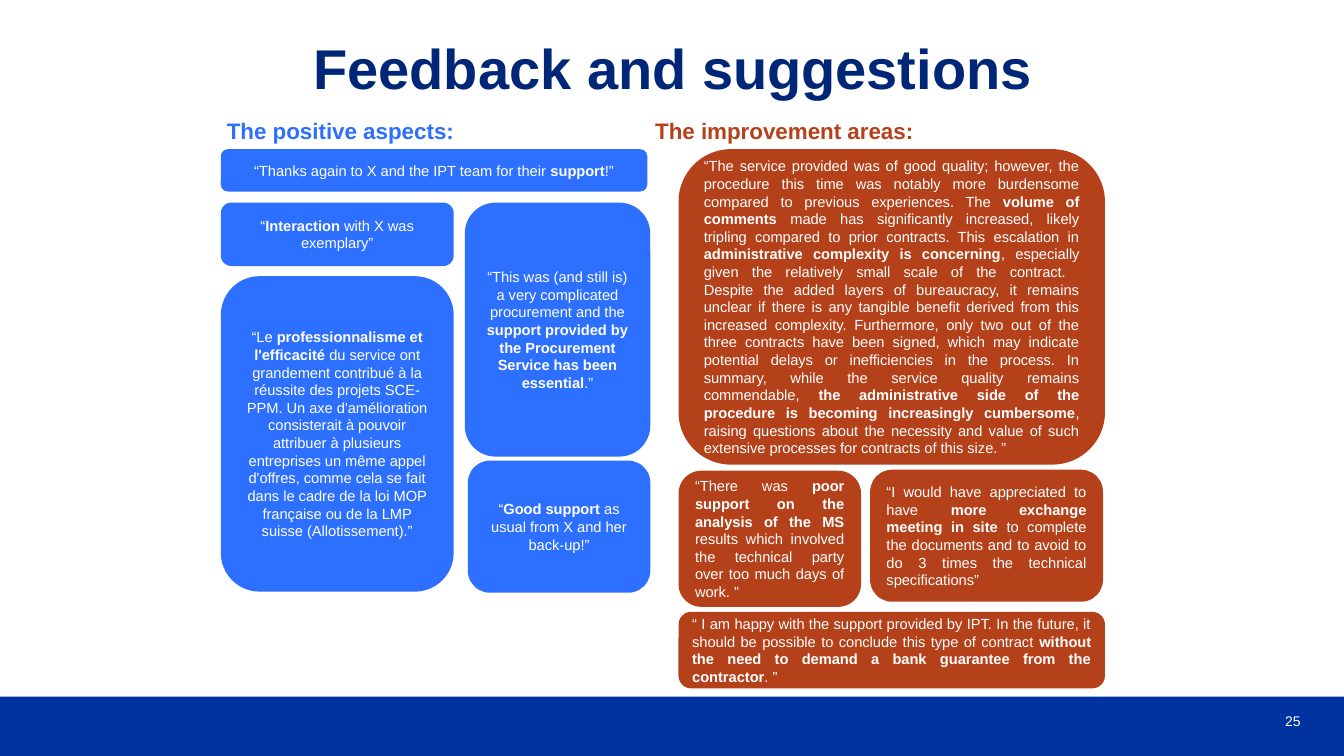
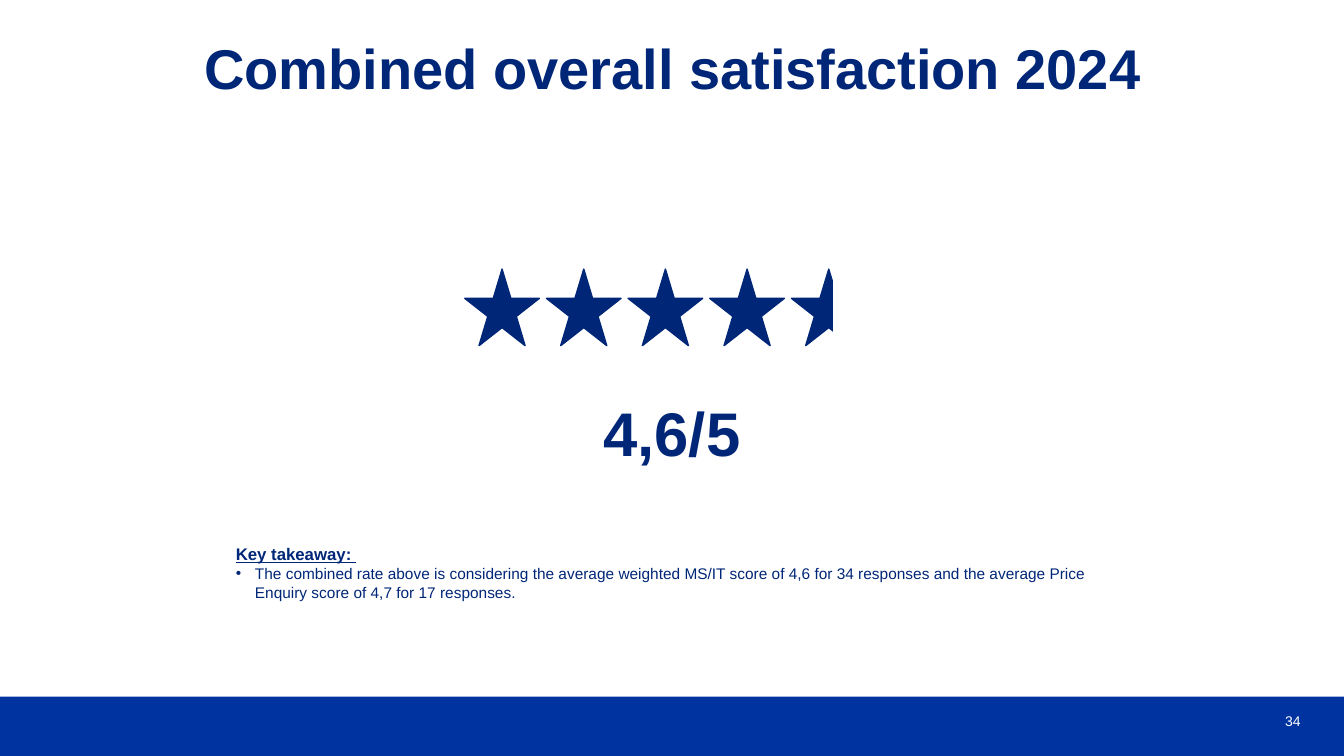
"""Build two survey slides: feedback quotes and the combined satisfaction score."""
from pptx import Presentation
from pptx.dml.color import RGBColor
from pptx.enum.shapes import MSO_SHAPE
from pptx.enum.text import MSO_ANCHOR, PP_ALIGN
from pptx.oxml.ns import qn
from pptx.util import Inches, Pt
from lxml import etree

WHITE = RGBColor(0xFF, 0xFF, 0xFF)
NAVY = RGBColor(0x00, 0x26, 0x78)
BAND_BLUE = RGBColor(0x00, 0x33, 0xA0)
BRIGHT_BLUE = RGBColor(0x2D, 0x70, 0xFF)
RUST = RGBColor(0xB4, 0x41, 0x1A)
FONT = "Arial"
RECTANGLE, ROUNDED, STAR = MSO_SHAPE.RECTANGLE, MSO_SHAPE.ROUNDED_RECTANGLE, MSO_SHAPE.STAR_5_POINT
LEFT, CENTER, RIGHT, JUSTIFY = PP_ALIGN.LEFT, PP_ALIGN.CENTER, PP_ALIGN.RIGHT, PP_ALIGN.JUSTIFY
TOP, MIDDLE = MSO_ANCHOR.TOP, MSO_ANCHOR.MIDDLE

FEEDBACK = [
    {
        "heading": "The positive aspects:", "heading_box": (2.25, 1.16, 3.2, 0.27),
        "heading_align": LEFT, "color": BRIGHT_BLUE, "quote_align": CENTER,
        "quotes": [
            ((2.19, 1.48, 4.23, 0.42), "“Thanks again to X and the IPT team for their **support**!”"),
            ((2.19, 2.01, 2.31, 0.63), "“**Interaction** with X was exemplary”"),
            ((4.61, 2.01, 1.84, 2.52),
             "“This was (and still is) a very complicated procurement and the "
             "**support provided by the Procurement Service has been essential**.”"),
            ((2.19, 2.74, 2.31, 3.13),
             "“Le **professionnalisme et l'efficacité **du service ont grandement contribué "
             "à la réussite des projets SCE-PPM. Un axe d'amélioration consisterait à pouvoir "
             "attribuer à plusieurs entreprises un même appel d'offres, comme cela se fait dans "
             "le cadre de la loi MOP française ou de la LMP suisse (Allotissement).”"),
            ((4.64, 4.57, 1.81, 1.31), "“**Good support **as usual from X and her back-up!”"),
        ],
    },
    {
        "heading": "The improvement areas:", "heading_box": (5.78, 1.16, 3.28, 0.27),
        "heading_align": RIGHT, "color": RUST, "quote_align": JUSTIFY,
        "quotes": [
            ((6.73, 1.48, 4.23, 3.13),
             "“The service provided was of good quality; however, the procedure this time was "
             "notably more burdensome compared to previous experiences. The **volume of comments "
             "**made has significantly increased, likely tripling compared to prior contracts. "
             "This escalation in **administrative complexity is concerning**, especially given "
             "the relatively small scale of the contract. ",
             "Despite the added layers of bureaucracy, it remains unclear if there is any "
             "tangible benefit derived from this increased complexity. Furthermore, only two out "
             "of the three contracts have been signed, which may indicate potential delays or "
             "inefficiencies in the process. In summary, while the service quality remains "
             "commendable, **the administrative side of the procedure is becoming increasingly "
             "cumbersome**, raising questions about the necessity and value of such extensive "
             "processes for contracts of this size. ”"),
            ((6.73, 4.67, 1.81, 1.35),
             "“There was **poor support on the analysis of the MS **results which involved the "
             "technical party over too much days of work. ”"),
            ((8.63, 4.66, 2.31, 1.31),
             "“I would have appreciated to have **more exchange meeting in site** to complete "
             "the documents and to avoid to do 3 times the technical specifications”"),
            ((6.73, 6.07, 4.23, 0.76),
             "“ I am happy with the support provided by IPT. In the future, it should be possible "
             "to conclude this type of contract **without the need to demand a bank guarantee "
             "from the contractor**. ”"),
        ],
    },
]

SCORE = "4,6/5"
STAR_COUNT = 5
STAR_LEFT, STAR_TOP, STAR_PITCH = 4.61, 2.67, 0.81
STAR_SIZE = (0.74, 0.76)
STAR_MASK = (8.27, 2.66, 0.45, 0.8)
TAKEAWAY_HEADING = "Key takeaway: "
TAKEAWAY = (
    "The combined rate above is considering the average weighted MS/IT score of 4,6 for 34 "
    "responses and the average Price Enquiry score of 4,7 for 17 responses."
)


def add_shape(slide, kind, box, fill, line=None):
    shape = slide.shapes.add_shape(kind, *map(Inches, box))
    shape.shadow.inherit = False
    shape.fill.solid()
    shape.fill.fore_color.rgb = fill
    if line is None:
        shape.line.fill.background()
    else:
        shape.line.color.rgb = line
        shape.line.width = Pt(1)
    return shape


def style(paragraph, size, color, bold=None, align=LEFT):
    paragraph.alignment = align
    font = paragraph.font
    font.name, font.size, font.bold = FONT, Pt(size), bold
    font.color.rgb = color


def add_text(slide, box, text, size, color, bold=None, align=LEFT, anchor=TOP, inset=False):
    frame = slide.shapes.add_textbox(*map(Inches, box)).text_frame
    frame.word_wrap = True
    frame.vertical_anchor = anchor
    if not inset:
        frame.margin_left = frame.margin_right = frame.margin_top = frame.margin_bottom = 0
    paragraph = frame.paragraphs[0]
    paragraph.text = text
    style(paragraph, size, color, bold, align)
    return frame


def add_quote(slide, box, lines, fill, align):
    """Add a rounded quote in which double asterisks enclose bold words."""
    frame = add_shape(slide, ROUNDED, box, fill).text_frame
    frame.word_wrap = True
    frame.vertical_anchor = MIDDLE
    paragraph = frame.paragraphs[0]
    for line_index, line in enumerate(lines):
        if line_index:
            paragraph.add_line_break()
        for part_index, part in enumerate(line.split("**")):
            run = paragraph.add_run()
            run.text = part
            if part_index % 2:
                run.font.bold = True
    style(paragraph, 10.5, WHITE, align=align)


def add_bullet(paragraph, indent):
    properties = paragraph._p.get_or_add_pPr()
    properties.set("marL", str(Inches(indent)))
    properties.set("indent", str(-Inches(indent)))
    etree.SubElement(properties, qn("a:buFont")).set("typeface", FONT)
    etree.SubElement(properties, qn("a:buChar")).set("char", "•")


def add_base_slide(presentation, title, number):
    slide = presentation.slides.add_slide(presentation.slide_layouts[6])
    add_shape(slide, RECTANGLE, (0, 6.91, 13.33, 0.59), BAND_BLUE)
    frame = add_text(slide, (0.45, 0.41, 12.44, 1.17), title, 40, NAVY, True, CENTER)
    frame.paragraphs[0].line_spacing = 0.9
    add_text(slide, (12.15, 6.95, 0.75, 0.4), str(number), 10, WHITE, align=RIGHT, anchor=MIDDLE)
    return slide


def build_feedback(presentation):
    slide = add_base_slide(presentation, "Feedback and suggestions", 25)
    for group in FEEDBACK:
        add_text(slide, group["heading_box"], group["heading"], 16, group["color"], True,
                 group["heading_align"])
        for box, *lines in group["quotes"]:
            add_quote(slide, box, lines, group["color"], group["quote_align"])


def build_satisfaction(presentation):
    slide = add_base_slide(presentation, "Combined overall satisfaction 2024", 34)
    for index in range(STAR_COUNT):
        add_shape(slide, STAR, (STAR_LEFT + index * STAR_PITCH, STAR_TOP, *STAR_SIZE), NAVY, NAVY)
    add_shape(slide, RECTANGLE, STAR_MASK, WHITE, WHITE)
    add_text(slide, (5.73, 3.87, 1.87, 0.84), SCORE, 44, NAVY, True, CENTER, inset=True)
    frame = add_text(slide, (2.24, 5.35, 8.86, 1.04), TAKEAWAY_HEADING, 12, NAVY, True, inset=True)
    frame.paragraphs[0].font.underline = True
    paragraph = frame.add_paragraph()
    paragraph.text = TAKEAWAY
    add_bullet(paragraph, 0.19)
    style(paragraph, 11, NAVY)


def main():
    presentation = Presentation()
    presentation.slide_width, presentation.slide_height = Inches(13.33), Inches(7.5)
    build_feedback(presentation)
    build_satisfaction(presentation)
    presentation.save("out.pptx")


if __name__ == "__main__":
    main()
